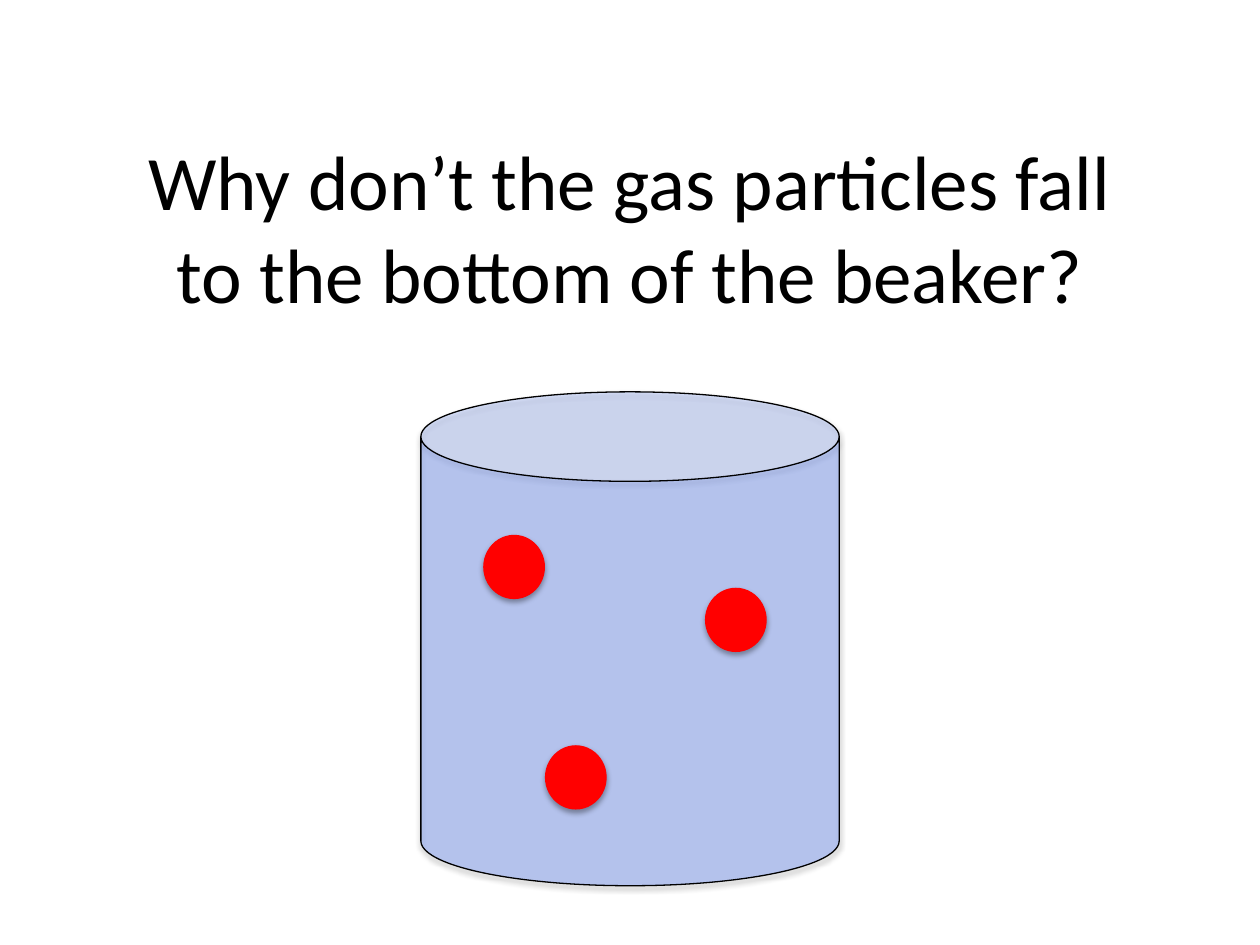
from dataclasses import dataclass

from lxml.etree import SubElement
from pptx import Presentation
from pptx.dml.color import RGBColor
from pptx.enum.shapes import MSO_SHAPE as Preset
from pptx.enum.text import MSO_ANCHOR as Anchor, PP_ALIGN as Align
from pptx.oxml.ns import qn
from pptx.util import Pt


@dataclass(frozen=True)
class Theme:
    font: str = "Calibri"
    title_size: int = 44
    ink: RGBColor = RGBColor(0, 0, 0)
    gas: RGBColor = RGBColor(0x33, 0x66, 0xFF)
    particle: RGBColor = RGBColor(0xFF, 0, 0)
    gas_opacity: int = 28
    shadow_opacity: int = 35
    line_width: float = 0.75


THEME = Theme()
PARTICLE_SIZE = (34.56, 36)
# Left and top of each particle, measured from the beaker's corner.
PARTICLE_OFFSETS = [(162.72, 112.32), (71.28, 202.32), (36, 82.08)]


def set_opacity(color_node, percent):
    SubElement(color_node, qn("a:alpha"), val=str(percent * 1000))


def add_soft_shadow(shape):
    """Cast a faint shadow straight down."""
    shape.shadow.inherit = False
    effects = shape.element.spPr.find(qn("a:effectLst"))
    shadow = SubElement(effects, qn("a:outerShdw"), blurRad=str(Pt(3.1)),
                        dist=str(Pt(1.8)), dir=str(90 * 60000), rotWithShape="0")
    color = SubElement(shadow, qn("a:srgbClr"), val=str(THEME.ink))
    set_opacity(color, THEME.shadow_opacity)


def add_solid(slide, preset, box, fill, line):
    shape = slide.shapes.add_shape(preset, *map(Pt, box))
    shape.fill.solid()
    shape.fill.fore_color.rgb = fill
    shape.line.color.rgb = line
    shape.line.width = Pt(THEME.line_width)
    add_soft_shadow(shape)
    return shape


def add_title(slide, box, text):
    frame = slide.shapes.add_textbox(*map(Pt, box)).text_frame
    frame.word_wrap = True
    frame.vertical_anchor = Anchor.MIDDLE
    para = frame.paragraphs[0]
    para.text = text
    para.alignment = Align.CENTER
    para.font.name = THEME.font
    para.font.size = Pt(THEME.title_size)
    para.font.color.rgb = THEME.ink


def add_beaker(slide, box):
    """Draw a see-through beaker with the gas particles inside."""
    left, top, _, _ = box
    beaker = add_solid(slide, Preset.CAN, box, THEME.gas, THEME.ink)
    beaker.adjustments[0] = 0.214
    set_opacity(beaker.element.spPr.find(qn("a:solidFill"))[0], THEME.gas_opacity)
    for dx, dy in PARTICLE_OFFSETS:
        add_solid(slide, Preset.OVAL, (left + dx, top + dy, *PARTICLE_SIZE),
                  THEME.particle, THEME.particle)


def main():
    deck = Presentation()
    deck.slide_width, deck.slide_height = Pt(720), Pt(540)
    slide = deck.slides.add_slide(deck.slide_layouts[6])
    add_title(slide, (54, 71.28, 612, 115.92),
              "Why don’t the gas particles fall to the bottom of the beaker?")
    add_beaker(slide, (240.48, 223.92, 239.04, 282.24))
    deck.save("out.pptx")


if __name__ == "__main__":
    main()
